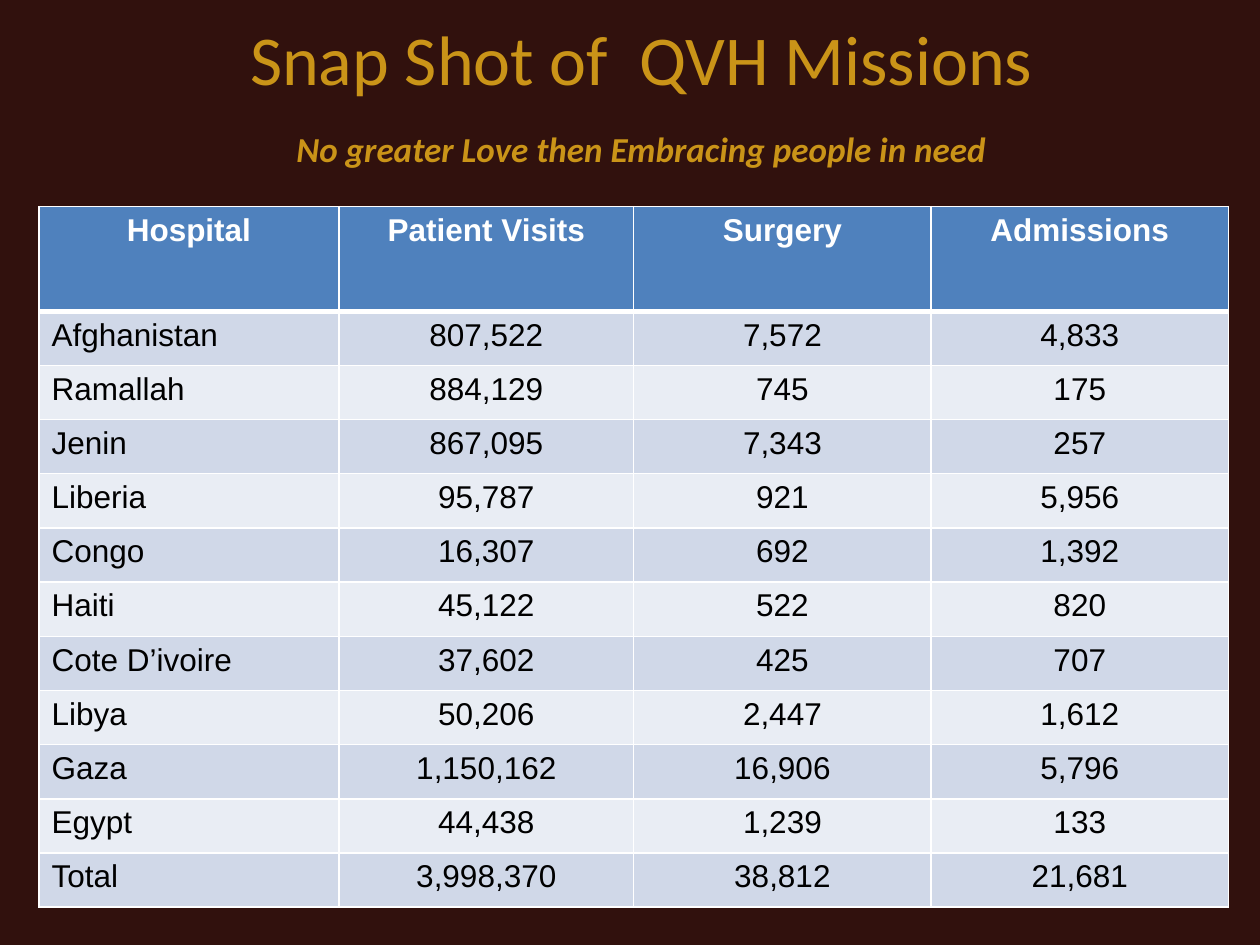
from lxml.etree import SubElement
from pptx import Presentation
from pptx.dml.color import RGBColor
from pptx.enum.text import MSO_ANCHOR, PP_ALIGN
from pptx.oxml.ns import qn
from pptx.util import Inches, Pt

MAROON = RGBColor(0x31, 0x11, 0x0D)
GOLD = RGBColor(0xCA, 0x94, 0x18)
BLUE = RGBColor(0x4F, 0x81, 0xBD)
DARK_BAND = RGBColor(0xD0, 0xD8, 0xE8)
LIGHT_BAND = RGBColor(0xE9, 0xED, 0xF4)
WHITE = RGBColor(0xFF, 0xFF, 0xFF)
BLACK = RGBColor(0, 0, 0)

COLUMN_WIDTHS = [2.38, 2.34, 2.36, 2.36]
HEADER_HEIGHT, ROW_HEIGHT = 0.83, 0.43
ROWS = [
    ("Hospital", "Patient Visits", "Surgery", "Admissions"),
    ("Afghanistan", "807,522", "7,572", "4,833"),
    ("Ramallah", "884,129", "745", "175"),
    ("Jenin", "867,095", "7,343", "257"),
    ("Liberia", "95,787", "921", "5,956"),
    ("Congo", "16,307", "692", "1,392"),
    ("Haiti", "45,122", "522", "820"),
    ("Cote D’ivoire", "37,602", "425", "707"),
    ("Libya", "50,206", "2,447", "1,612"),
    ("Gaza", "1,150,162", "16,906", "5,796"),
    ("Egypt", "44,438", "1,239", "133"),
    ("Total", "3,998,370", "38,812", "21,681"),
]


def add_span(para, text, font_name, size, color, bold=False, italic=False):
    span = para.add_run()
    span.text = text
    font = span.font
    font.name, font.size, font.bold, font.italic = font_name, Pt(size), bold, italic
    font.color.rgb = color


def set_borders(cell, color, widths):
    """Draw the cell's sides; widths maps L, R, T and B, in that order, to points."""
    properties = cell._tc.get_or_add_tcPr()
    for index, (side, width) in enumerate(widths.items()):
        line = SubElement(properties, qn(f"a:ln{side}"), w=str(Pt(width)))
        fill = SubElement(line, qn("a:solidFill"))
        SubElement(fill, qn("a:srgbClr"), val=str(color))
        properties.insert(index, line)  # borders come before the cell's fill


deck = Presentation()
deck.slide_width, deck.slide_height = Inches(10), Inches(7.5)
page = deck.slides.add_slide(deck.slide_layouts[6])
page.background.fill.solid()
page.background.fill.fore_color.rgb = MAROON

# Title and motto
title_box = page.shapes.add_textbox(Inches(0.59), Inches(0.11), Inches(9), Inches(1.25))
frame = title_box.text_frame
frame.word_wrap = True
frame.vertical_anchor = MSO_ANCHOR.MIDDLE
title = frame.paragraphs[0]
title.alignment = PP_ALIGN.CENTER
add_span(title, "Snap Shot of  QVH Missions", "Calibri", 40, GOLD)
motto = frame.add_paragraph()
motto.alignment = PP_ALIGN.CENTER
motto.space_before = Pt(16)
add_span(motto, "No greater Love then Embracing people in need", "Calibri", 20, GOLD,
         bold=True, italic=True)

# Hospital figures
table_height = HEADER_HEIGHT + ROW_HEIGHT * (len(ROWS) - 1)
table = page.shapes.add_table(
    len(ROWS), len(COLUMN_WIDTHS), Inches(0.31), Inches(1.64),
    Inches(sum(COLUMN_WIDTHS)), Inches(table_height)).table
for column, width in zip(table.columns, COLUMN_WIDTHS):
    column.width = Inches(width)

for row_index, values in enumerate(ROWS):
    is_header = row_index == 0
    table.rows[row_index].height = Inches(HEADER_HEIGHT if is_header else ROW_HEIGHT)
    if is_header:
        band = BLUE
    else:
        band = DARK_BAND if row_index % 2 else LIGHT_BAND
    top_width = 3 if row_index == 1 else 1
    bottom_width = 3 if is_header else 1
    for column_index, value in enumerate(values):
        cell = table.cell(row_index, column_index)
        cell.fill.solid()
        cell.fill.fore_color.rgb = band
        set_borders(cell, WHITE, {"L": 1, "R": 1, "T": top_width, "B": bottom_width})
        para = cell.text_frame.paragraphs[0]
        is_name = column_index == 0 and not is_header
        para.alignment = PP_ALIGN.LEFT if is_name else PP_ALIGN.CENTER
        add_span(para, value, "Arial", 18, WHITE if is_header else BLACK, bold=is_header)

deck.save("out.pptx")
